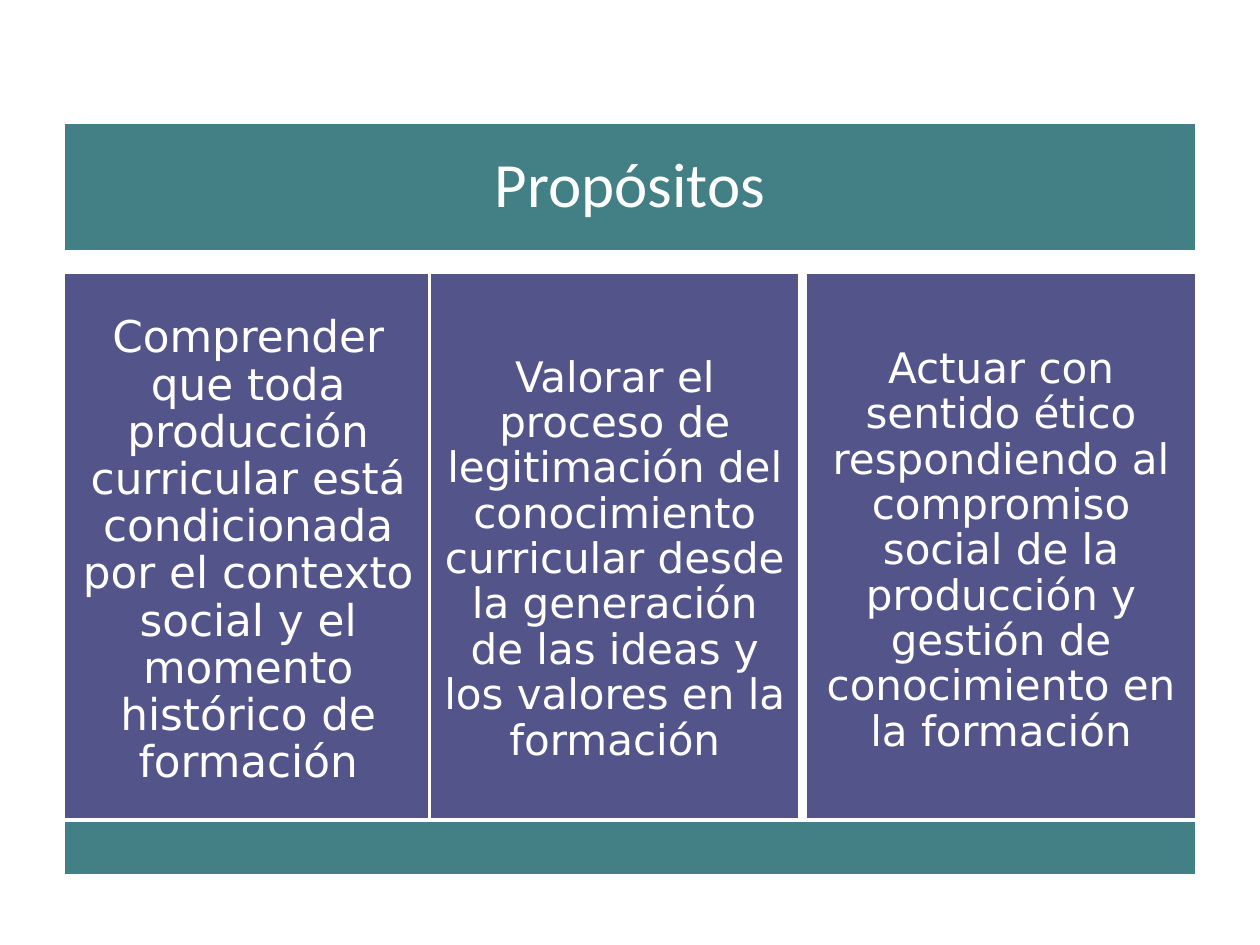
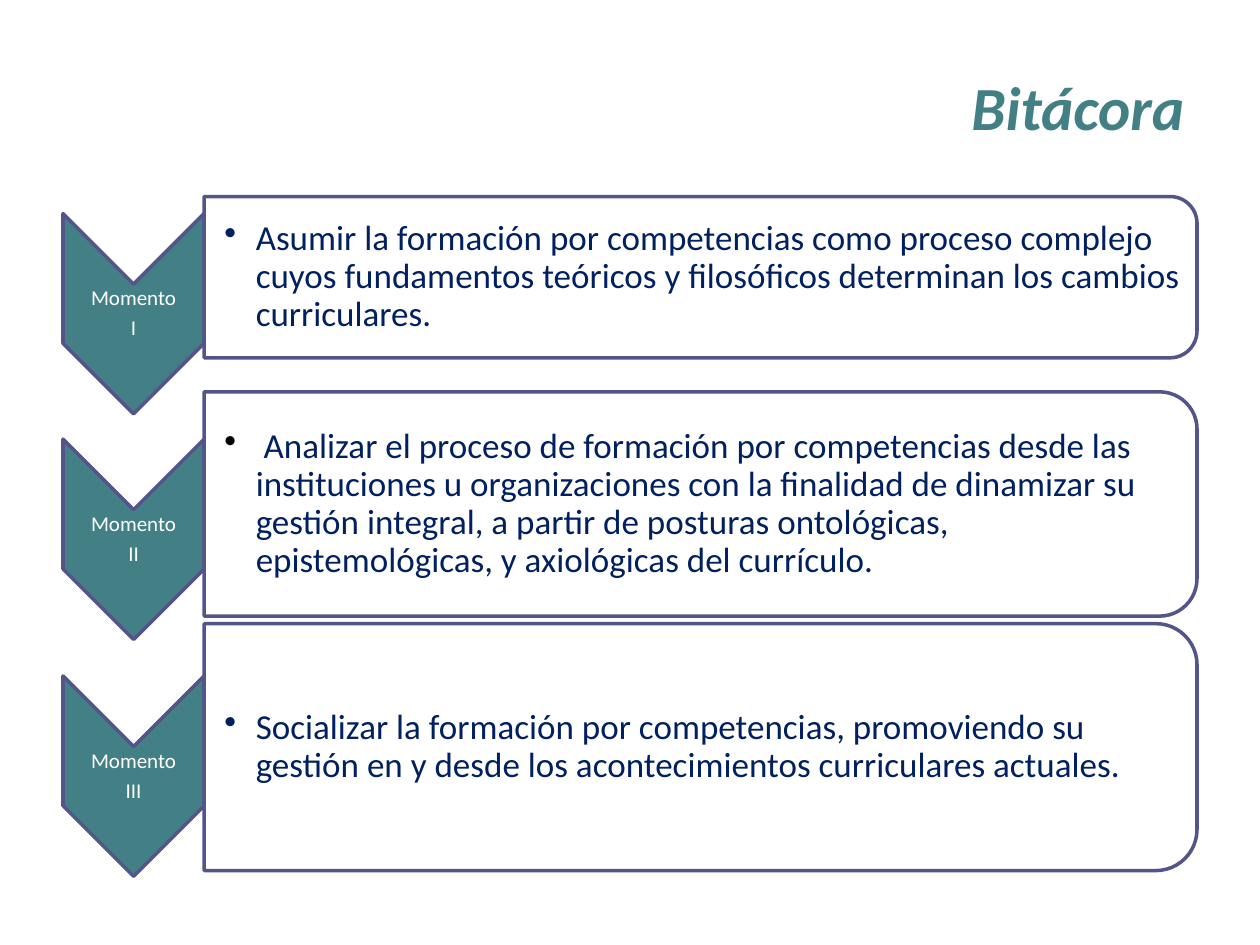
from lxml import etree
from pptx import Presentation
from pptx.dml.color import RGBColor
from pptx.enum.shapes import MSO_SHAPE
from pptx.enum.text import MSO_ANCHOR, PP_ALIGN
from pptx.oxml.ns import qn
from pptx.util import Inches, Pt

COLORS = {
    "teal": "438086",
    "violet": "53548A",
    "white": "FFFFFF",
    "navy": "002060",
    "black": "000000",
}
HEADING_FONT = "Calibri"
COLUMN_FONT = "DejaVu Sans"


def add_block(slide, kind, box, fill, line, rotation=0):
    """Draw a flat preset shape; box is left, top, width, height before rotation."""
    block = slide.shapes.add_shape(kind, *map(Inches, box))
    block.shadow.inherit = False
    block.fill.solid()
    block.fill.fore_color.rgb = RGBColor.from_string(COLORS[fill])
    block.line.color.rgb = RGBColor.from_string(COLORS[line])
    block.line.width = Pt(2)
    block.rotation = rotation
    return block


def write_text(holder, paragraphs, size, align, insets, font=HEADING_FONT,
               spacing=0.9, after=0, bold=False, italic=False):
    """Fill a shape or text box with paragraphs, each a list of (text, colour) runs."""
    frame = holder.text_frame
    frame.word_wrap = True
    frame.vertical_anchor = MSO_ANCHOR.MIDDLE
    frame.margin_left, frame.margin_top, frame.margin_right, frame.margin_bottom = map(Inches, insets)
    for index, runs in enumerate(paragraphs):
        paragraph = frame.add_paragraph() if index else frame.paragraphs[0]
        paragraph.alignment = align
        paragraph.line_spacing = spacing
        paragraph.space_after = Pt(after)
        for text, color in runs:
            run = paragraph.add_run()
            run.text = text
            run.font.name = font
            run.font.size = Pt(size)
            run.font.bold = bold
            run.font.italic = italic
            run.font.color.rgb = RGBColor.from_string(COLORS[color])
    return frame


deck = Presentation()
deck.slide_width = Inches(10)
deck.slide_height = Inches(7.5)
blank = deck.slide_layouts[6]

# Slide 1: purposes in three columns between two bands
purposes_slide = deck.slides.add_slide(blank)
header = add_block(purposes_slide, MSO_SHAPE.RECTANGLE, (0.5, 0.97, 9, 1.03), "teal", "white")
write_text(header, [[("Propósitos", "white")]], 36, PP_ALIGN.CENTER, [0.15] * 4)

purposes = [
    (0.5, 2.94, 4.43, 25,
     "Comprender que toda producción curricular está condicionada por el contexto "
     "social y el momento histórico de formación"),
    (3.41, 2.94, 4.57, 24,
     "Valorar el proceso de legitimación del conocimiento curricular desde la "
     "generación de las ideas y los valores en la formación"),
    (6.39, 3.11, 4.43, 24,
     "Actuar con sentido ético respondiendo al compromiso social de la producción "
     "y gestión de conocimiento en la formación"),
]
for left, width, height, size, purpose in purposes:
    column = add_block(purposes_slide, MSO_SHAPE.RECTANGLE, (left, 2.16, width, height), "violet", "white")
    write_text(column, [[(purpose, "white")]], size, PP_ALIGN.CENTER, [0.1] * 4, font=COLUMN_FONT)

add_block(purposes_slide, MSO_SHAPE.RECTANGLE, (0.5, 6.51, 9, 0.44), "teal", "white")

# Slide 2: logbook of three moments
logbook_slide = deck.slides.add_slide(blank)
title = logbook_slide.shapes.add_textbox(Inches(0.47), Inches(0.45), Inches(9.03), Inches(0.78))
write_text(title, [[("Bitácora", "teal")]], 35, PP_ALIGN.RIGHT, (0.1, 0.05, 0.1, 0.05),
           spacing=1, bold=True, italic=True)

CHEVRON_LENGTH, CHEVRON_WIDTH = 1.59, 1.12
CHEVRON_CENTER_X = 1.06
CARD_LEFT, CARD_WIDTH = 1.62, 7.88
CARD_CENTER_X = CARD_LEFT + CARD_WIDTH / 2

# numeral, chevron centre, card centre, card height, runs
moments = [
    ("I", 2.49, 2.2, 1.28, [
        ("Asumir la formación por competencias como proceso complejo cuyos fundamentos "
         "teóricos y filosóficos determinan los cambios curriculares.", "navy")]),
    ("II", 4.28, 4.0, 1.78, [
        (" ", "black"),
        ("Analizar el proceso de formación por competencias desde las instituciones u "
         "organizaciones con la finalidad de dinamizar su gestión integral, a partir de "
         "posturas ontológicas, epistemológicas, y axiológicas del currículo.", "navy")]),
    ("III", 6.16, 5.93, 1.96, [
        ("Socializar la formación por competencias, promoviendo su gestión en y desde los "
         "acontecimientos curriculares actuales.", "navy")]),
]
for numeral, chevron_y, card_y, card_height, aim in moments:
    add_block(logbook_slide, MSO_SHAPE.CHEVRON,
              (CHEVRON_CENTER_X - CHEVRON_LENGTH / 2, chevron_y - CHEVRON_WIDTH / 2,
               CHEVRON_LENGTH, CHEVRON_WIDTH), "teal", "violet", 90)
    label = logbook_slide.shapes.add_textbox(
        Inches(0.5), Inches(chevron_y - 0.24), Inches(CHEVRON_WIDTH), Inches(0.48))
    write_text(label, [[("Momento", "white")], [(numeral, "white")]], 12,
               PP_ALIGN.CENTER, [0.01] * 4, after=4.2)

    add_block(logbook_slide, MSO_SHAPE.ROUND_2_SAME_RECTANGLE,
              (CARD_CENTER_X - card_height / 2, card_y - CARD_WIDTH / 2,
               card_height, CARD_WIDTH), "white", "violet", 90)
    text_height = card_height - 0.16
    description = logbook_slide.shapes.add_textbox(
        Inches(CARD_LEFT), Inches(card_y - text_height / 2), Inches(7.81), Inches(text_height))
    frame = write_text(description, [aim], 20, PP_ALIGN.LEFT, (0.16, 0.01, 0.01, 0.01))
    properties = frame.paragraphs[0]._p.get_or_add_pPr()
    properties.set("marL", str(Inches(0.25)))
    properties.set("indent", str(-Inches(0.25)))
    etree.SubElement(properties, qn("a:buChar"), char="•")

deck.save("out.pptx")
